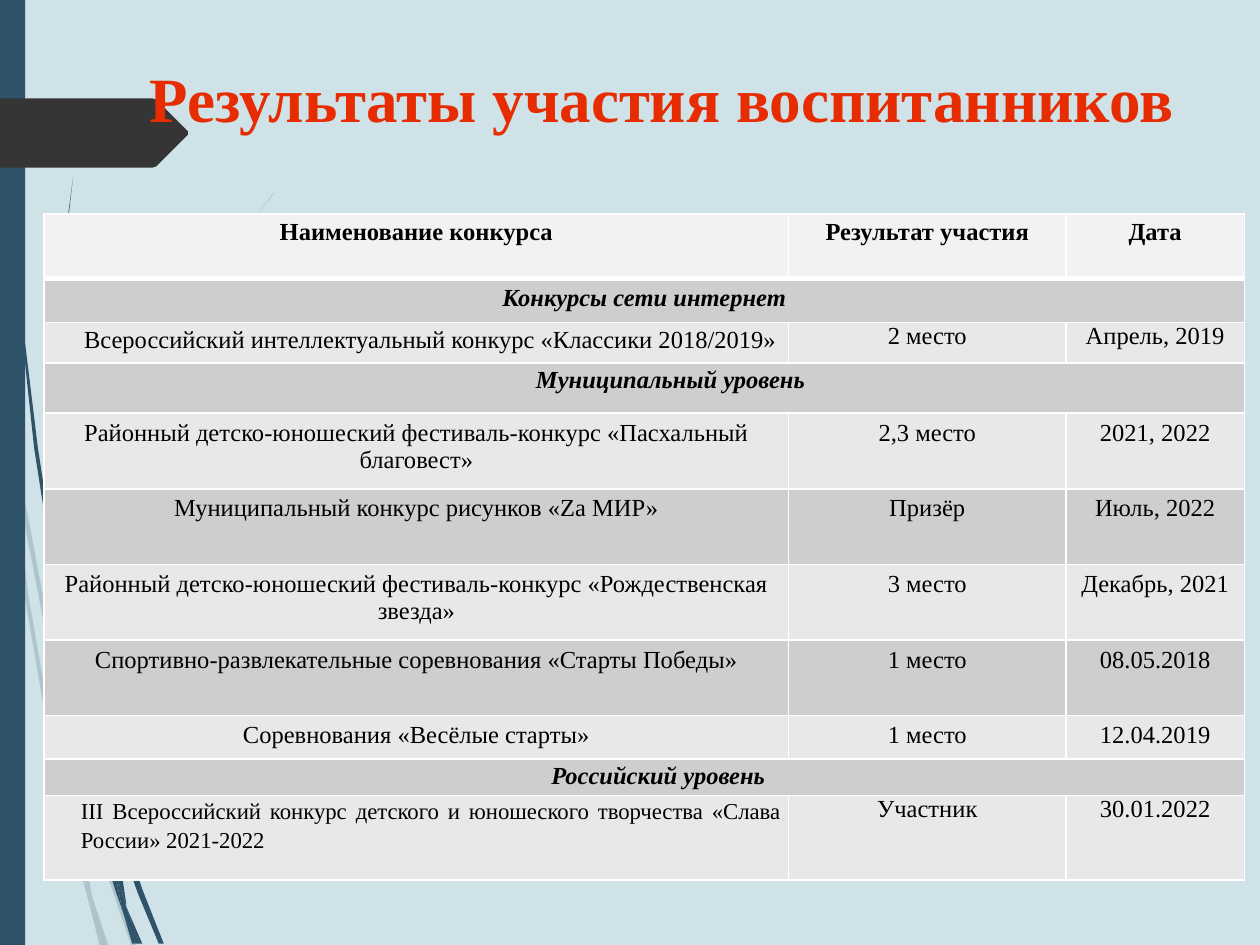
from lxml import etree
from pptx import Presentation
from pptx.dml.color import RGBColor
from pptx.enum.shapes import MSO_SHAPE
from pptx.enum.text import MSO_ANCHOR, MSO_AUTO_SIZE, PP_ALIGN
from pptx.oxml.ns import qn
from pptx.util import Pt

RECT = MSO_SHAPE.RECTANGLE
TOP = MSO_ANCHOR.TOP
NO_FIT = MSO_AUTO_SIZE.NONE
CENTER, JUSTIFY = PP_ALIGN.CENTER, PP_ALIGN.JUSTIFY
FONT = "Times New Roman"
BLUE, GRAY, LIGHT = "2E5369", "CECECE", "E8E8E8"
UNIT = Pt(0.72)  # outlines are drawn on a grid of 100 steps to 72 points

# Outlines of the grass blades behind the table, in grid steps
PALE_BLADES = [
    [(8, 350), (6, 322), (0, 282), (0, 299), (7, 344)],
    [(40, 522), (59, 599), (59, 586), (43, 520), (10, 345), (12, 376)],
    [(64, 607), (61, 596), (61, 610), (85, 694), (104, 750), (108, 750), (88, 692)],
    [(83, 750), (86, 750), (73, 711)],
    [(64, 683), (48, 619), (22, 469), (12, 376), (8, 350), (19, 470), (45, 621),
     (64, 693), (70, 714), (69, 707)],
    [(58, 599), (60, 646), (64, 683), (67, 692), (73, 711), (72, 706), (63, 646),
     (61, 610), (61, 608)],
    [(61, 584), (76, 462), (111, 349), (159, 245), (187, 198), (201, 175), (217, 154),
     (217, 153), (201, 175), (186, 197), (158, 244), (110, 348), (75, 461), (59, 584),
     (59, 586), (61, 596)],
    [(70, 714), (79, 750), (82, 750)],
    [(61, 608), (61, 610), (61, 596), (59, 586), (58, 599)],
    [(67, 692), (65, 683), (69, 707), (70, 714), (82, 750), (83, 750), (73, 711)],
]
DARK_BLADES = [
    [(5, 110), (14, 233), (27, 355), (46, 477), (47, 481), (45, 457), (45, 453),
     (30, 355), (15, 232), (6, 109), (4, 48), (3, 0), (2, 0), (3, 48)],
    [(73, 592), (88, 645), (88, 633), (88, 631), (77, 590), (50, 472), (53, 505)],
    [(94, 649), (91, 641), (91, 656), (109, 708), (126, 749), (130, 749), (113, 706)],
    [(91, 691), (81, 657), (60, 556), (53, 505), (47, 477), (56, 557), (77, 659),
     (92, 708), (97, 722), (96, 717)],
    [(50, 472), (48, 453), (44, 349), (48, 245), (52, 193), (58, 141), (51, 193),
     (47, 245), (43, 349), (45, 449), (49, 472)],
    [(110, 749), (113, 749), (100, 719)],
    [(47, 477), (53, 505), (50, 472), (49, 472), (45, 449), (45, 453)],
    [(91, 633), (103, 552), (131, 476), (169, 406), (191, 374), (203, 359), (216, 344),
     (215, 344), (203, 358), (191, 373), (168, 405), (129, 474), (101, 551), (88, 631),
     (91, 641)],
    [(97, 722), (105, 749), (108, 749)],
    [(88, 645), (91, 691), (96, 706), (100, 719), (100, 716), (91, 656), (90, 651)],
    [(88, 645), (90, 651), (91, 656), (91, 641), (88, 631), (88, 633)],
    [(96, 706), (91, 691), (96, 717), (97, 722), (108, 749), (110, 749), (100, 719)],
]
TAG = [(0, 0), (121, 0), (124, 1), (149, 26), (149, 29), (124, 54), (121, 55), (0, 55)]

# Row kinds: inner margins, then the format of the first and the other cells
SNUG, ROOMY = (5.04, 0), (7.2, 3.6)
PLAIN = dict(size=14, bold=False, italic=False, align=CENTER, spacing=1.0, indent=0)
HEAD = PLAIN | dict(bold=True, spacing=1.15)
LEVEL = HEAD | dict(italic=True, indent=16)
SECTION = LEVEL | dict(spacing=1.0, indent=0)
NAMED = PLAIN | dict(spacing=1.15, indent=16)
LAST = NAMED | dict(size=13, align=JUSTIFY)

COLS = [425.5, 158.4, 102.1]
ROWS = [  # height, fill, margins, first format, other format, texts
    (36.9, "F2F2F2", SNUG, HEAD, HEAD, ["Наименование конкурса", "Результат участия", "Дата"]),
    (25, GRAY, ROOMY, SECTION, PLAIN, ["Конкурсы сети интернет"]),
    (23.1, LIGHT, SNUG, NAMED, PLAIN,
     ["Всероссийский интеллектуальный конкурс «Классики 2018/2019»", "2 место", "Апрель, 2019"]),
    (28.8, GRAY, SNUG, LEVEL | dict(indent=30), PLAIN, ["Муниципальный уровень"]),
    (43.2, LIGHT, ROOMY, PLAIN, PLAIN,
     ["Районный детско-юношеский фестиваль-конкурс «Пасхальный благовест»",
      "2,3 место", "2021, 2022"]),
    (43.2, GRAY, ROOMY, PLAIN, PLAIN,
     ["Муниципальный конкурс рисунков «Zа МИР»", "Призёр", "Июль, 2022"]),
    (43.2, LIGHT, ROOMY, PLAIN, PLAIN,
     ["Районный детско-юношеский фестиваль-конкурс «Рождественская звезда»",
      "3 место", "Декабрь, 2021"]),
    (43.2, GRAY, ROOMY, PLAIN, PLAIN,
     ["Спортивно-развлекательные соревнования «Старты Победы»", "1 место", "08.05.2018"]),
    (24.8, LIGHT, ROOMY, PLAIN, PLAIN, ["Соревнования «Весёлые старты»", "1 место", "12.04.2019"]),
    (21, GRAY, SNUG, LEVEL, PLAIN, ["Российский уровень"]),
    (48.2, LIGHT, SNUG, LAST, PLAIN,
     ["III Всероссийский конкурс детского и юношеского творчества «Слава России» 2021-2022",
      "Участник", "30.01.2022"]),
]


def rgb(color):
    return RGBColor.from_string(color)


def set_attrs(obj, **values):
    for name, value in values.items():
        setattr(obj, name, value)


def paint(sp, color, alpha=None):
    """Flat fill without line or shadow; alpha is a percentage."""
    sp.shadow.inherit = False
    sp.fill.solid()
    sp.fill.fore_color.rgb = rgb(color)
    sp.line.fill.background()
    if alpha is not None:
        clr = sp._element.spPr.find(qn("a:solidFill")).find(qn("a:srgbClr"))
        etree.SubElement(clr, qn("a:alpha"), val=str(alpha * 1000))


def add_outlines(s, x, y, outlines, color, alpha=None):
    for points in outlines:
        builder = s.shapes.build_freeform(*points[0], scale=UNIT)
        builder.add_line_segments(points[1:], close=True)
        paint(builder.convert_to_shape(Pt(x), Pt(y)), color, alpha)


def add_decoration(s, x, y, height):
    add_outlines(s, x, y, PALE_BLADES, BLUE, 20)
    add_outlines(s, x, y, DARK_BLADES, BLUE)
    paint(s.shapes.add_shape(RECT, Pt(x), Pt(y), Pt(14.4), Pt(height)), BLUE)
    add_outlines(s, x, y + 56.2, [TAG], "353535")


def add_title(s, x, y, w, h, text):
    sp = s.shapes.title
    s.shapes._spTree.append(sp._element)  # in front of the decoration
    set_attrs(sp, left=Pt(x), top=Pt(y), width=Pt(w), height=Pt(h))
    tf = sp.text_frame
    set_attrs(tf, text=text, word_wrap=True, auto_size=NO_FIT, vertical_anchor=TOP,
              margin_left=Pt(17.3), margin_right=Pt(7.2), margin_top=Pt(8.3))
    p = tf.paragraphs[0]
    p.alignment = CENTER
    set_attrs(p.runs[0].font, name=FONT, size=Pt(36), bold=True)
    p.runs[0].font.color.rgb = rgb("E62C00")


def set_borders(cell, **widths):
    for side in ("L", "R", "T", "B"):
        width = Pt(widths.get(side, 1))
        ln = etree.SubElement(cell._tc.get_or_add_tcPr(), qn(f"a:ln{side}"), w=str(width))
        fill = etree.SubElement(ln, qn("a:solidFill"))
        etree.SubElement(fill, qn("a:srgbClr"), val="FFFFFF")


def write_cell(cell, text, margins, fmt):
    side, edge = (Pt(m) for m in margins)
    set_attrs(cell, text=text, vertical_anchor=TOP, margin_left=side, margin_right=side,
              margin_top=edge, margin_bottom=edge)
    p = cell.text_frame.paragraphs[0]
    set_attrs(p, alignment=fmt["align"], line_spacing=fmt["spacing"])
    p._p.get_or_add_pPr().set("marL", str(Pt(fmt["indent"])))
    font = p.runs[0].font
    set_attrs(font, name=FONT, size=Pt(fmt["size"]), bold=fmt["bold"], italic=fmt["italic"])
    font.color.rgb = rgb("000000")


def add_results(s, x, y):
    height = sum(row[0] for row in ROWS)
    table = s.shapes.add_table(len(ROWS), len(COLS), Pt(x), Pt(y),
                               Pt(sum(COLS)), Pt(height)).table
    for col, width in zip(table.columns, COLS):
        col.width = Pt(width)
    for i, (height, color, margins, first, other, texts) in enumerate(ROWS):
        table.rows[i].height = Pt(height)
        cells = list(table.rows[i].cells)
        for cell in cells:
            set_borders(cell, **{0: {"B": 3}, 1: {"T": 3}}.get(i, {}))
            cell.fill.solid()
            cell.fill.fore_color.rgb = rgb(color)
        if len(texts) == 1:
            cells[0].merge(cells[-1])
        for j, text in enumerate(texts):
            write_cell(cells[j], text, margins, other if j else first)


def main():
    prs = Presentation()
    set_attrs(prs, slide_width=Pt(720), slide_height=Pt(540))
    s = prs.slides.add_slide(prs.slide_layouts[5])
    s.background.fill.solid()
    s.background.fill.fore_color.rgb = rgb("CFE2E7")
    add_decoration(s, 0, 0, 540)
    add_title(s, 54, 25.9, 637.9, 104.4, "Результаты участия воспитанников")
    add_results(s, 25.2, 122.4)
    prs.save("out.pptx")


if __name__ == "__main__":
    main()
